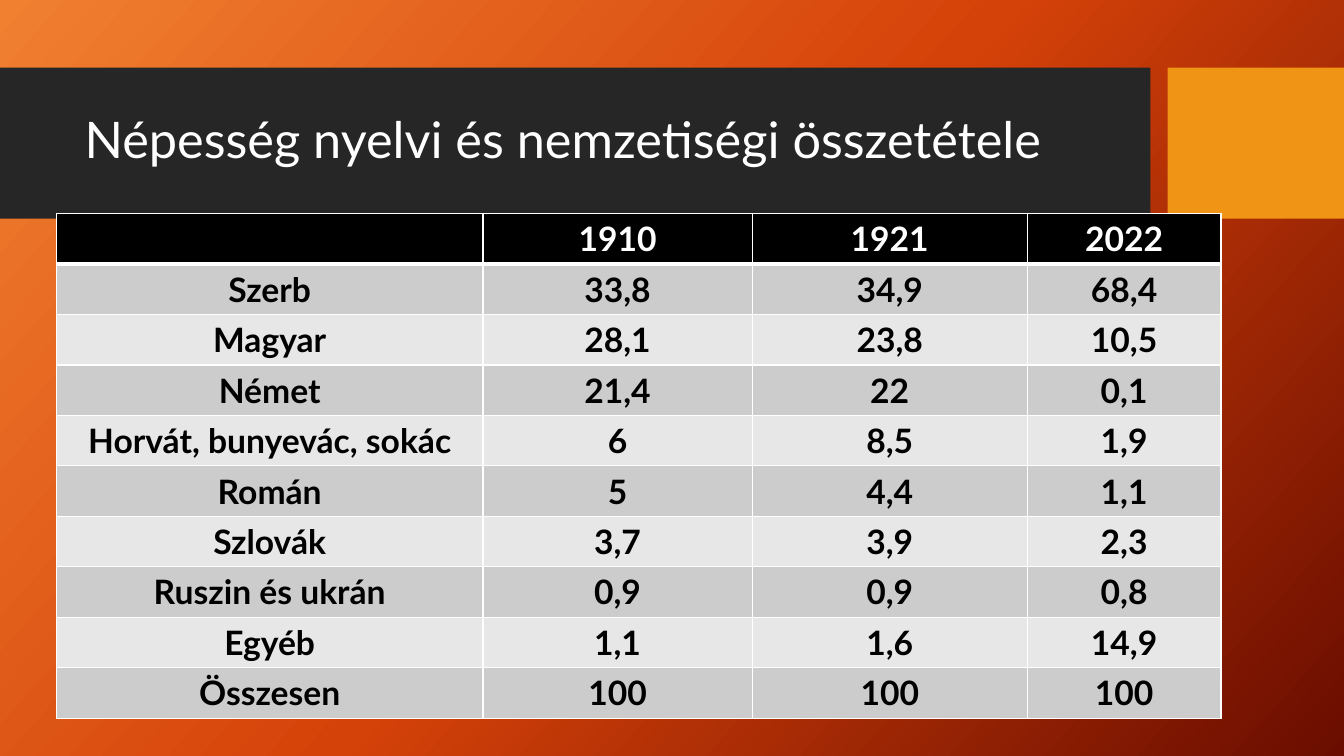
from copy import deepcopy
from dataclasses import dataclass

from lxml.etree import SubElement as Sub
from pptx import Presentation
from pptx.dml.color import RGBColor as Rgb
from pptx.enum.shapes import MSO_SHAPE as Kind
from pptx.enum.text import MSO_ANCHOR as Anchor, PP_ALIGN as Align
from pptx.oxml.ns import qn
from pptx.util import Inches, Pt

INK = {
    "white": "FFFFFF", "black": "000000", "dark": "262626", "gold": "F09415",
    "odd": "CCCCCC", "even": "E7E7E7",
    "light": "F18031", "mid": "D54209", "deep": "6A0D00",
}
FONT = "Lato"
WIDTHS = [4.23, 2.67, 2.73, 1.92]
HIGH = 0.5
ROWS = [
    ["", "1910", "1921", "2022"],
    ["Szerb", "33,8", "34,9", "68,4"],
    ["Magyar", "28,1", "23,8", "10,5"],
    ["Német", "21,4", "22", "0,1"],
    ["Horvát, bunyevác, sokác", "6", "8,5", "1,9"],
    ["Román", "5", "4,4", "1,1"],
    ["Szlovák", "3,7", "3,9", "2,3"],
    ["Ruszin és ukrán", "0,9", "0,9", "0,8"],
    ["Egyéb", "1,1", "1,6", "14,9"],
    ["Összesen", "100", "100", "100"],
]


@dataclass
class Band:
    left: float
    width: float
    tint: str


BANDS = [Band(0, 11.41, "dark"), Band(11.58, 1.75, "gold")]


def tone(name: str) -> Rgb:
    return Rgb.from_string(INK[name])


def write(frame, text: str, size: float, tint: str, bold: bool = False,
          align=Align.CENTER, lead: float = 1.0) -> None:
    para = frame.paragraphs[0]
    para.text = text
    para.alignment = align
    para.line_spacing = lead
    font = para.font
    font.name, font.size, font.bold = FONT, Pt(size), bold
    font.color.rgb = tone(tint)


def paint(slide) -> None:
    fill = slide.background.fill
    fill.gradient()
    fill.gradient_angle = 318
    stops = slide.element.find(".//" + qn("a:gsLst"))
    stops.insert(1, deepcopy(stops[0]))
    for stop, place, name in zip(fill.gradient_stops, (0, 0.5, 1),
                                 ("light", "mid", "deep")):
        stop.position = place
        stop.color.rgb = tone(name)


def draw(slide, band: Band) -> None:
    box = slide.shapes.add_shape(Kind.RECTANGLE, Inches(band.left), Inches(0.67),
                                 Inches(band.width), Inches(1.5))
    box.shadow.inherit = False
    box.fill.solid()
    box.fill.fore_color.rgb = tone(band.tint)
    box.line.fill.background()


def head(slide, text: str) -> None:
    title = slide.shapes.title
    title.left, title.top = Inches(0.74), Inches(0.82)
    title.width, title.height = Inches(10.51), Inches(1.18)
    title.text_frame.vertical_anchor = Anchor.MIDDLE
    write(title.text_frame, text, 36, "white", align=Align.LEFT, lead=0.9)
    slide.shapes.element.append(title.element)


def edge(cell, row: int) -> None:
    props = cell._tc.get_or_add_tcPr()
    wide = {"T": 3 if row == 1 else 1, "B": 3 if row == 0 else 1}
    for side in "LRTB":
        line = Sub(props, qn("a:ln" + side), w=str(Pt(wide.get(side, 1))))
        Sub(Sub(line, qn("a:solidFill")), qn("a:srgbClr"), val=INK["white"])


def fill_cell(cell, text: str, row: int) -> None:
    edge(cell, row)
    cell.fill.solid()
    back = "black" if row == 0 else "odd" if row % 2 else "even"
    cell.fill.fore_color.rgb = tone(back)
    if text:
        write(cell.text_frame, text, 24, "black" if row else "white", bold=True)


def grid(slide) -> None:
    table = slide.shapes.add_table(
        len(ROWS), len(WIDTHS), Inches(0.56), Inches(2.12),
        Inches(sum(WIDTHS)), Inches(HIGH * len(ROWS))).table
    for col, width in zip(table.columns, WIDTHS):
        col.width = Inches(width)
    for row, texts in enumerate(ROWS):
        table.rows[row].height = Inches(HIGH)
        for col, text in enumerate(texts):
            fill_cell(table.cell(row, col), text, row)


def main() -> None:
    deck = Presentation()
    deck.slide_width, deck.slide_height = Inches(13.33), Inches(7.5)
    slide = deck.slides.add_slide(deck.slide_layouts[5])
    paint(slide)
    for band in BANDS:
        draw(slide, band)
    head(slide, "Népesség nyelvi és nemzetiségi összetétele")
    grid(slide)
    deck.save("out.pptx")


if __name__ == "__main__":
    main()
